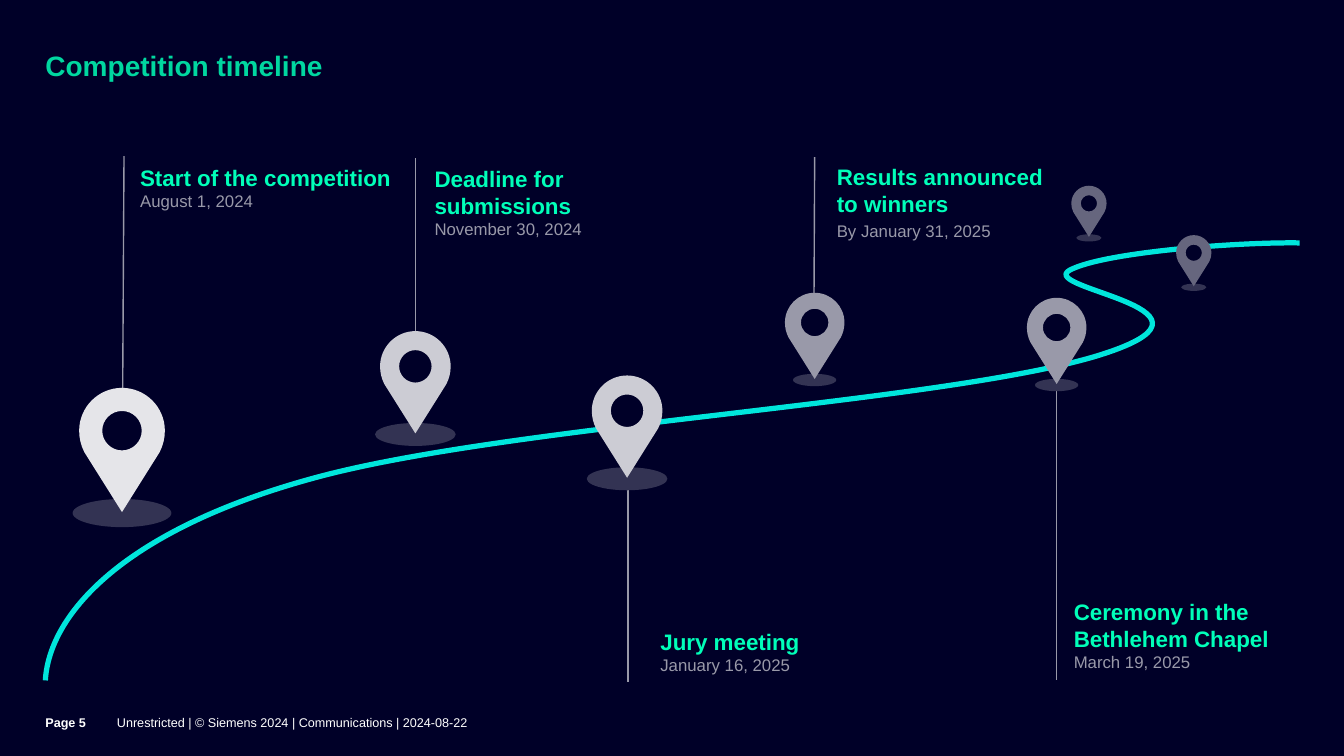
from dataclasses import dataclass

from lxml import etree
from pptx import Presentation
from pptx import util as u
from pptx.dml.color import RGBColor
from pptx.enum import shapes, text
from pptx.oxml import ns


@dataclass(frozen=True)
class Theme:
    """Colours, font and type sizes of the slide."""
    night: str = "000028"
    title: str = "00D7A0"
    event: str = "00FFB9"
    road: str = "00E6DC"
    muted: str = "9999A9"
    shadow: str = "333353"
    white: str = "FFFFFF"
    font: str = "Arial"
    title_size: int = 20
    event_size: int = 16
    date_size: int = 12
    footer_size: int = 9


THEME = Theme()
TOP, MIDDLE, BOTTOM = text.MSO_ANCHOR.TOP, text.MSO_ANCHOR.MIDDLE, text.MSO_ANCHOR.BOTTOM

ROAD = [
    (0.45, 6.75),
    (0.49, 6.08), (1.25, 5.24), (3.16, 4.73),
    (5.07, 4.22), (9.27, 4.0), (10.85, 3.54),
    (12.42, 3.07), (10.27, 2.87), (10.61, 2.68),
    (10.95, 2.5), (12.28, 2.4), (12.89, 2.41),
]
EVENTS = [
    ("Start of the competition", "August 1, 2024", (1.23, 1.55, 2.95, 0.63), TOP, 0),
    ("Deadline for submissions", "November 30, 2024", (4.15, 1.56, 2.56, 0.9), TOP, 0),
    ("Results announced to winners", "By January 31, 2025", (8.14, 1.54, 2.6, 0.94), TOP, 3),
    ("Jury meeting", "January 16, 2025", (6.39, 6.15, 2.56, 0.63), BOTTOM, 0),
    ("Ceremony in the Bethlehem Chapel", "March 19, 2025", (10.49, 5.85, 2.4, 0.9), BOTTOM, 0),
]
STEMS = [
    ((10.48, 3.81), (10.48, 6.75)),
    ((6.23, 4.56), (6.23, 6.77)),
    ((8.08, 1.56), (8.07, 3.74)),
    ((4.12, 1.57), (4.12, 4.11)),
    ((1.23, 1.55), (1.21, 5.08)),
]
PINS = [
    ((1.21, 5.08), 0.85, 0.98, "E5E5E9"),
    ((4.12, 4.3), 0.7, 0.8, "CCCCD4"),
    ((6.22, 4.74), 0.7, 0.8, "CCCCD4"),
    ((8.08, 3.76), 0.59, 0.43, "9999A9"),
    ((10.48, 3.81), 0.59, 0.43, "9999A9"),
    ((10.8, 2.35), 0.35, 0.25, "66667E"),
    ((11.84, 2.84), 0.35, 0.25, "66667E"),
]
HEAD, HEAD_RADIUS, HOLE_RADIUS, WELL_RADIUS, BEND = -0.95, 0.5, 0.23, 0.32, 0.55


def rgb(colour):
    """Turn a hex string into a colour."""
    return RGBColor.from_string(colour)


def add_text(slide, box, paragraphs, anchor=TOP, insets=(0, 0, 0, 0), grow=False, spacing=None):
    """Add a text box of (words, size, colour, bold, space before) paragraphs."""
    frame = slide.shapes.add_textbox(*map(u.Inches, box)).text_frame
    frame.word_wrap = True
    frame.vertical_anchor = anchor
    frame.auto_size = text.MSO_AUTO_SIZE.SHAPE_TO_FIT_TEXT if grow else text.MSO_AUTO_SIZE.NONE
    (frame.margin_left, frame.margin_top,
     frame.margin_right, frame.margin_bottom) = map(u.Inches, insets)
    for index, (words, size, colour, bold, before) in enumerate(paragraphs):
        paragraph = frame.add_paragraph() if index else frame.paragraphs[0]
        run = paragraph.add_run()
        run.text = words
        run.font.name, run.font.size, run.font.bold = THEME.font, u.Pt(size), bold
        run.font.color.rgb = rgb(colour)
        if before:
            paragraph.space_before = u.Pt(before)
        if spacing:
            paragraph.line_spacing = spacing


def bend_segments(outline):
    """Turn each three successive straight segments into one cubic curve."""
    waiting = []
    for segment in list(outline._element.xpath(".//a:path")[0]):
        if segment.tag != ns.qn("a:lnTo"):
            waiting = []
            continue
        waiting.append(segment)
        if len(waiting) == 3:
            curve = etree.Element(ns.qn("a:cubicBezTo"))
            waiting[0].addprevious(curve)
            for straight in waiting:
                curve.append(straight[0])
                straight.getparent().remove(straight)
            waiting = []


def add_outline(parent, contours, close):
    """Add a curved freeform; each contour is a start and its curve points."""
    scaled = [[(u.Inches(x), u.Inches(y)) for x, y in contour] for contour in contours]
    builder = parent.build_freeform(*scaled[0][0])
    for index, contour in enumerate(scaled):
        if index:
            builder.move_to(*contour[0])
        builder.add_line_segments(contour[1:], close=close)
    outline = builder.convert_to_shape()
    outline.shadow.inherit = False
    bend_segments(outline)
    return outline


def fill_plain(shape, colour):
    """Fill a shape with one colour and no line."""
    shape.shadow.inherit = False
    shape.fill.solid()
    shape.fill.fore_color.rgb = rgb(colour)
    shape.line.fill.background()


def add_ellipse(parent, centre, width, height, colour):
    """Add a plain ellipse around its centre."""
    box = (centre[0] - width / 2, centre[1] - height / 2, width, height)
    fill_plain(parent.add_shape(shapes.MSO_SHAPE.OVAL, *map(u.Inches, box)), colour)


def add_road(slide):
    """Draw the winding road."""
    road = add_outline(slide.shapes, [ROAD], close=False)
    road.fill.background()
    road.line.color.rgb = rgb(THEME.road)
    road.line.width = u.Pt(3.75)


def add_stem(slide, start, end):
    """Draw the thin line between an event and its pin."""
    stem = slide.shapes.add_connector(shapes.MSO_CONNECTOR.STRAIGHT, *map(u.Inches, start + end))
    stem.line.color.rgb = rgb(THEME.muted)
    stem.line.width = u.Pt(1)
    etree.SubElement(stem._element.spPr, ns.qn("a:effectLst"))


def pin_contours():
    """Return body and hole of a pin of width one, with its tip at zero."""
    shoulder, bend = (0.44, -0.7), BEND * HEAD_RADIUS
    right = [shoulder] * 3 + [
        (0.48, -0.78), (HEAD_RADIUS, -0.86), (HEAD_RADIUS, HEAD),
        (HEAD_RADIUS, HEAD - bend), (bend, HEAD - HEAD_RADIUS), (0, HEAD - HEAD_RADIUS)]
    left = [(-x, y) for x, y in reversed(right[2:-1])]
    quarter, circle = [(BEND, -1), (1, -BEND), (1, 0)], [(0, -1)]
    for _ in range(4):
        circle += quarter
        quarter = [(-y, x) for x, y in quarter]
    hole = [(x * HOLE_RADIUS, HEAD + y * HOLE_RADIUS) for x, y in circle]
    return [(0, 0)] + right + left + [(0, 0)], hole


def add_pin(slide, tip, width, shadow_width, colour):
    """Draw a map pin standing on its shadow."""
    pin = slide.shapes.add_group_shape().shapes
    x, y = tip
    add_ellipse(pin, (x, y + 0.01), shadow_width, shadow_width * 0.285, THEME.shadow)
    well = 2 * WELL_RADIUS * width
    add_ellipse(pin, (x, y + HEAD * width), well, well, THEME.night)
    contours = [[(x + px * width, y + py * width) for px, py in part] for part in pin_contours()]
    fill_plain(add_outline(pin, contours, close=True), colour)


def main():
    """Build the timeline slide."""
    deck = Presentation()
    deck.slide_width, deck.slide_height = u.Inches(13.33), u.Inches(7.5)
    slide = deck.slides.add_slide(deck.slide_layouts[6])
    slide.background.fill.solid()
    slide.background.fill.fore_color.rgb = rgb(THEME.night)

    add_road(slide)
    add_text(slide, (0.45, 0.52, 10.79, 0.63),
             [("Competition timeline", THEME.title_size, THEME.title, True, 0)],
             insets=(0, 0, 0.35, 0.02), spacing=0.9)
    for event, date, box, anchor, gap in EVENTS:
        add_text(slide, box, [(event, THEME.event_size, THEME.event, True, 0),
                              (date, THEME.date_size, THEME.muted, False, gap)],
                 anchor=anchor, insets=(0.16, 0.08, 0.16, 0.08), grow=True)
    for words, left, width, bold in (
            ("Unrestricted | © Siemens 2024 | Communications | 2024-08-22", 1.16, 10.08, False),
            ("Page 5", 0.45, 0.71, True)):
        add_text(slide, (left, 6.9, width, 0.6),
                 [(words, THEME.footer_size, THEME.white, bold, 0)],
                 anchor=MIDDLE, insets=(0, 0, 0, 0.07))
    for stem in STEMS:
        add_stem(slide, *stem)
    for pin in PINS:
        add_pin(slide, *pin)
    deck.save("out.pptx")


if __name__ == "__main__":
    main()
